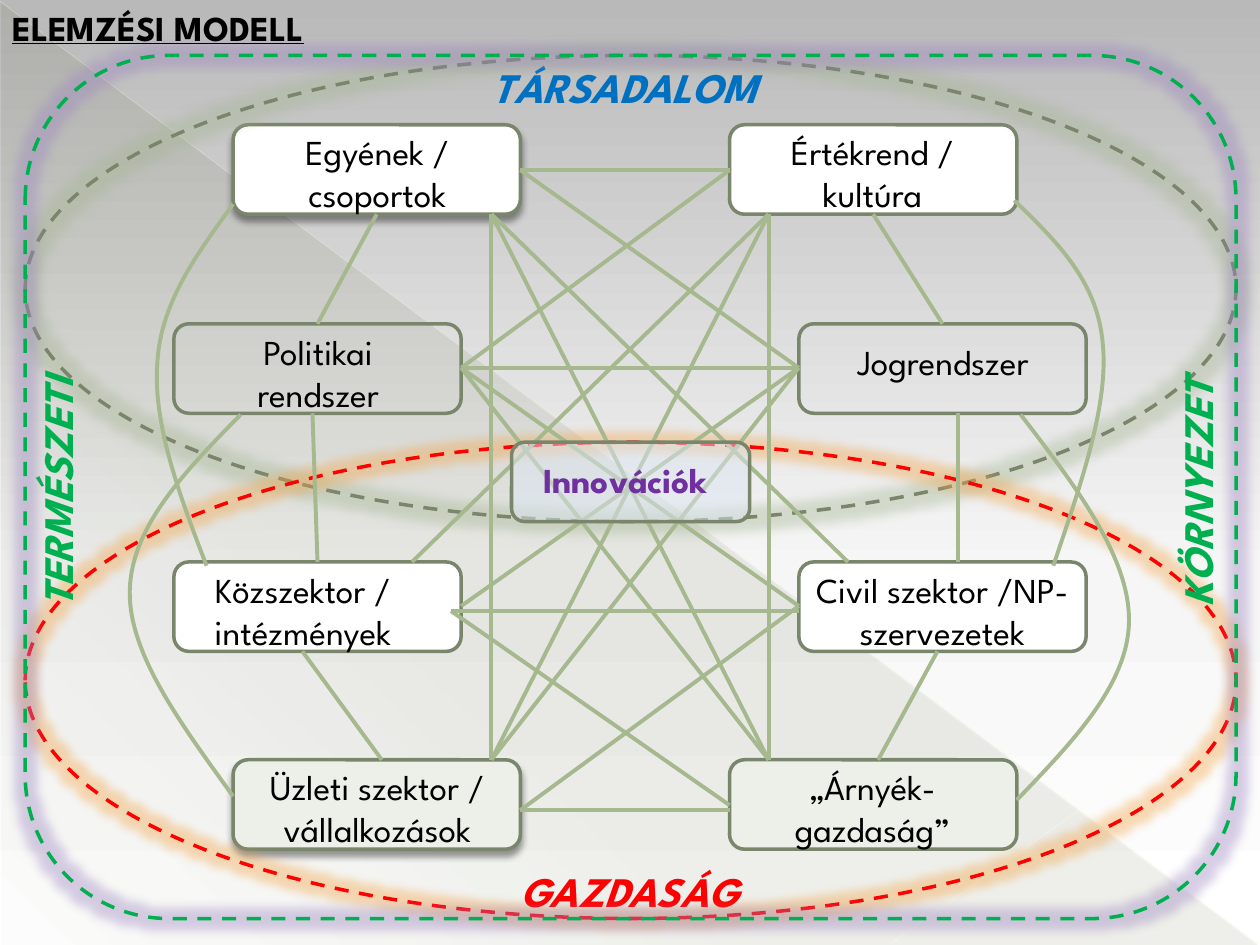
from dataclasses import dataclass

from lxml import etree
from pptx import Presentation
from pptx.dml.color import RGBColor
from pptx.enum.dml import MSO_LINE
from pptx.enum.shapes import MSO_CONNECTOR, MSO_SHAPE
from pptx.enum.text import MSO_AUTO_SIZE, PP_ALIGN
from pptx.oxml.ns import qn
from pptx.util import Inches, Pt

STRAIGHT = MSO_CONNECTOR.STRAIGHT
ROUND, OVAL, TRIANGLE = (MSO_SHAPE.ROUNDED_RECTANGLE, MSO_SHAPE.OVAL,
                         MSO_SHAPE.RIGHT_TRIANGLE)
DASH = MSO_LINE.DASH
GROW = MSO_AUTO_SIZE.SHAPE_TO_FIT_TEXT
LEFT, CENTER = PP_ALIGN.LEFT, PP_ALIGN.CENTER


@dataclass(frozen=True)
class Theme:
    font: str = "League Spartan"
    title: int = 24
    body: int = 20
    black: str = "000000"
    white: str = "FFFFFF"
    pale: str = "EDF0E9"
    ice: str = "DCE6F2"
    border: str = "7A866C"
    link: str = "A5B88E"
    blue: str = "0070C0"
    red: str = "FF0000"
    green: str = "00B050"
    purple: str = "7030A0"
    glow_green: str = "A5B592"
    glow_orange: str = "F3A447"
    glow_purple: str = "9C85C0"
    edge: float = 2
    link_width: float = 2.25


T = Theme()
BOX_W, BOX_H = 2.28, 0.71
INNER_L, INNER_R, OUTER_L, OUTER_R = 1.85, 5.79, 1.38, 6.34
ROWS = (0.99, 2.57, 4.46, 6.03)

# label, box left, row, fill, shadow, text left, text width, text drop
BOXES = [
    ("Egyének / csoportok", INNER_L, 0, T.white, True, 2.01, 1.97, 0),
    ("Értékrend / kultúra", INNER_R, 0, T.white, False, 5.94, 1.97, 0),
    ("Politikai rendszer", OUTER_L, 1, None, False, 1.54, 1.97, 0),
    ("Jogrendszer", OUTER_R, 1, None, False, 6.5, 1.97, 0.08),
    ("Közszektor / intézmények", OUTER_L, 2, T.white, False, 1.38, 2.05, 0),
    ("Civil szektor /NP- szervezetek", OUTER_R, 2, T.white, False, 6.26, 2.44, 0),
    ("Üzleti szektor / vállalkozások", INNER_L, 3, T.pale, True, 1.93, 2.13, 0),
    ("„Árnyék- gazdaság”", INNER_R, 3, T.pale, False, 5.94, 1.97, 0),
]

# Points where several links meet
PEOPLE, VALUES = (4.13, 1.35), (5.79, 1.35)
PEOPLE_LOW, VALUES_LOW = (3.9, 1.7), (6.1, 1.7)
POLITICS, LAW = (3.66, 2.92), (6.34, 2.92)
PUBLIC, CIVIL = (3.58, 4.85), (6.34, 4.81)
BUSINESS, BUSINESS_TOP, SHADOW_TOP = (4.13, 6.43), (3.9, 6.03), (6.1, 6.03)

LINKS = [
    (PEOPLE, VALUES), (BUSINESS, (5.79, 6.43)), (POLITICS, LAW),
    (PUBLIC, (6.34, 4.85)), (PEOPLE, LAW), (PUBLIC, (5.79, 6.39)),
    (POLITICS, VALUES), (BUSINESS, CIVIL),
    ((2.52, 2.57), (2.99, 1.7)), ((6.97, 6.03), (7.44, 5.17)),
    ((7.48, 2.57), (6.93, 1.7)), ((3.03, 6.03), (2.4, 5.17)),
    (BUSINESS_TOP, PEOPLE_LOW), (SHADOW_TOP, VALUES_LOW),
    (SHADOW_TOP, PEOPLE_LOW), (BUSINESS_TOP, VALUES_LOW),
    ((6.73, 4.46), PEOPLE_LOW), ((3.27, 4.46), VALUES_LOW),
    (BUSINESS_TOP, LAW), (CIVIL, POLITICS), (SHADOW_TOP, POLITICS),
    ((3.66, 4.81), LAW), ((7.6, 4.46), (7.6, 3.28)), ((2.48, 3.28), (2.52, 4.46)),
]

# Each curve: a start point, then two cubic segments of three points
CURVES = [
    [(1.85, 1.62), (1.57, 2.01), (1.28, 2.39), (1.25, 2.87),
     (1.21, 3.35), (1.42, 3.92), (1.64, 4.49)],
    [(8.05, 1.59), (8.38, 1.91), (8.7, 2.22), (8.75, 2.7),
     (8.81, 3.19), (8.58, 3.84), (8.36, 4.49)],
    [(1.91, 3.29), (1.47, 3.74), (1.04, 4.18), (1.03, 4.69),
     (1.02, 5.19), (1.44, 5.75), (1.85, 6.32)],
    [(8.07, 6.35), (8.51, 5.89), (8.96, 5.43), (8.96, 4.92),
     (8.96, 4.41), (8.53, 3.85), (8.1, 3.29)],
]


def add(parent, tag, **attrs):
    return etree.SubElement(parent, qn(tag), {k: str(v) for k, v in attrs.items()})


def add_color(parent, color, alpha):
    add(add(parent, "a:srgbClr", val=color), "a:alpha", val=alpha * 1000)


def set_alpha(el, alpha):
    add(el.find(".//" + qn("a:srgbClr")), "a:alpha", val=alpha * 1000)


def set_gradient(fill, el, stops, angle):
    fill.gradient()
    grad = el.find(".//" + qn("a:gradFill"))
    for child in list(grad):
        grad.remove(child)
    gs_list = add(grad, "a:gsLst")
    for pos, color, alpha in stops:
        add_color(add(gs_list, "a:gs", pos=pos * 1000), color, alpha)
    add(grad, "a:lin", ang=angle * 60000, scaled=0)


def add_effect(sp, tag, color, alpha, **attrs):
    effects = sp._element.spPr.find(qn("a:effectLst"))
    add_color(add(effects, tag, **attrs), color, alpha)


def set_line(sp, color, width, dash=None):
    sp.line.color.rgb = RGBColor.from_string(color)
    for name, value in {"width": Pt(width), "dash_style": dash}.items():
        setattr(sp.line, name, value)


def add_outline(s, kind, box, color, fill=None, dash=None, glow=None):
    sp = s.shapes.add_shape(kind, *map(Inches, box))
    sp.shadow.inherit = False
    if fill:
        sp.fill.solid()
        sp.fill.fore_color.rgb = RGBColor.from_string(fill)
    else:
        sp.fill.background()
    set_line(sp, color, T.edge, dash)
    if glow:
        add_effect(sp, "a:glow", glow, 40, rad=Pt(11))
    return sp


def add_link(s, start, end, color=T.link, width=T.link_width):
    cx = s.shapes.add_connector(STRAIGHT, *map(Inches, start + end))
    set_line(cx, color, width)
    add(cx._element.spPr, "a:effectLst")
    return cx


def add_curve(s, points):
    pts = [(Inches(x), Inches(y)) for x, y in points]
    builder = s.shapes.build_freeform(*pts[0])
    builder.add_line_segments(pts[1:], close=False)
    sp = builder.convert_to_shape()
    sp.shadow.inherit = False
    sp.fill.background()
    set_line(sp, T.link, T.link_width)
    # Turn each run of three line points into one cubic segment
    steps = list(sp._element.iter(qn("a:lnTo")))
    outline = steps[0].getparent()
    for i in range(0, len(steps), 3):
        cubic = add(outline, "a:cubicBezTo")
        for step in steps[i:i + 3]:
            cubic.append(step[0])
            outline.remove(step)


def add_text(s, text, box, color=T.black, size=T.body, align=CENTER, turn=0, **fmt):
    tb = s.shapes.add_textbox(*map(Inches, box))
    tb.rotation = turn
    tf = tb.text_frame
    tf.word_wrap = True
    tf.auto_size = GROW
    p = tf.paragraphs[0]
    p.alignment = align
    r = p.add_run()
    r.text = text
    for name, value in {"name": T.font, "size": Pt(size), **fmt}.items():
        setattr(r.font, name, value)
    r.font.color.rgb = RGBColor.from_string(color)


def add_backdrop(s):
    set_gradient(s.background.fill, s._element,
                 [(0, "B9B9B9", 100), (60, "F6F6F6", 100), (100, "FFFFFF", 100)], 90)
    sp = s.shapes.add_shape(TRIANGLE, *map(Inches, (0.01, 0.02, 9.98, 7.48)))
    sp.shadow.inherit = False
    sp.line.fill.background()
    set_gradient(sp.fill, sp._element,
                 [(0, "444D26", 10), (70, "444D26", 8), (100, "444D26", 1)], 133)
    for start, end, color, width, alpha in (
            ((0, 0.01), (9.99, 7.49), "FFFDE3", 0.39, 35),
            ((10, 5.41), (7.07, 7.49), "FFFDE6", 0.47, 45)):
        set_alpha(add_link(s, start, end, color, width)._element.spPr, alpha)


def main():
    prs = Presentation()
    prs.slide_width, prs.slide_height = Inches(10), Inches(7.5)
    s = prs.slides.add_slide(prs.slide_layouts[6])
    add_backdrop(s)

    # Boxes, spheres and the links between them
    for _, left, row, fill, shadow, *_ in BOXES:
        sp = add_outline(s, ROUND, (left, ROWS[row], BOX_W, BOX_H), T.border, fill)
        if shadow:
            add_effect(sp, "a:outerShdw", T.black, 40, blurRad=Pt(4), dist=Pt(3),
                       dir=5400000, rotWithShape=0)
    add_outline(s, OVAL, (0.2, 0.44, 9.61, 3.7), T.border, None, DASH, T.glow_green)
    add_outline(s, OVAL, (0.2, 3.51, 9.61, 3.78), T.red, None, DASH, T.glow_orange)
    for start, end in LINKS:
        add_link(s, start, end)
    for points in CURVES:
        add_curve(s, points)

    # Labels
    for text, _, row, _, _, left, width, drop in BOXES:
        height = 0.44 if drop else 0.77
        add_text(s, text, (left, ROWS[row] + drop, width, height))
    for text, box, color, turn in (
            ("TÁRSADALOM", (3.74, 0.44, 2.44, 0.5), T.blue, 0),
            ("GAZDASÁG", (3.82, 6.82, 2.36, 0.5), T.red, 0),
            ("TERMÉSZETI", (-0.73, 3.66, 2.36, 0.5), T.green, 270),
            ("KÖRNYEZET", (8.32, 3.66, 2.36, 0.5), T.green, 270)):
        add_text(s, text, box, color, T.title, turn=turn, bold=True, italic=True)

    # Centre, outer frame and heading
    centre = add_outline(s, ROUND, (4.06, 3.51, 1.89, 0.63), T.border, T.ice)
    set_alpha(centre._element.spPr, 50)
    add_outline(s, ROUND, (0.2, 0.44, 9.61, 6.85), T.green, None, DASH, T.glow_purple)
    add_text(s, "Innovációk", (3.98, 3.59, 1.97, 0.44), T.purple, bold=True)
    add_text(s, "ELEMZÉSI MODELL", (0, 0, 2.64, 0.44), align=LEFT,
             bold=True, underline=True)
    prs.save("out.pptx")


if __name__ == "__main__":
    main()
